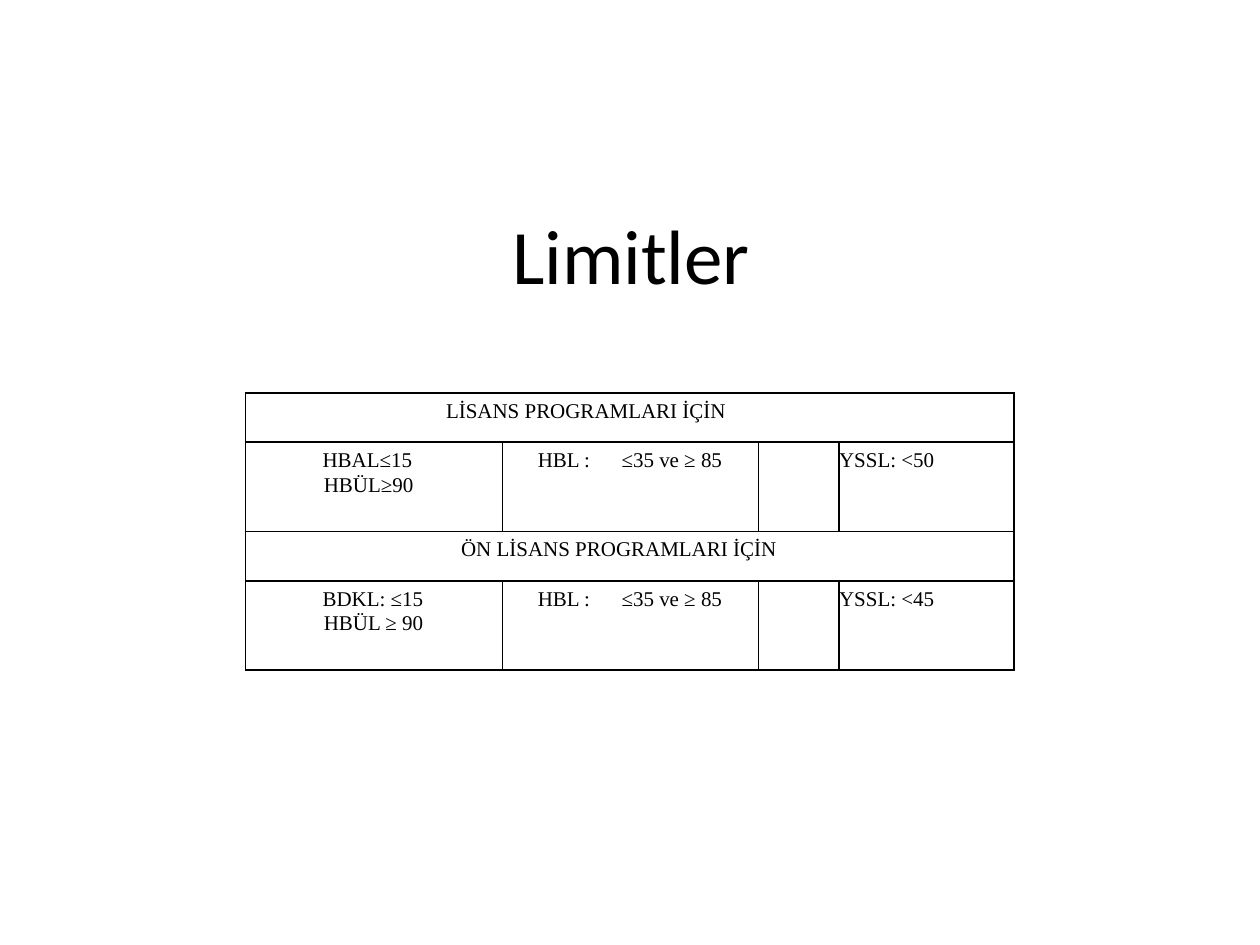
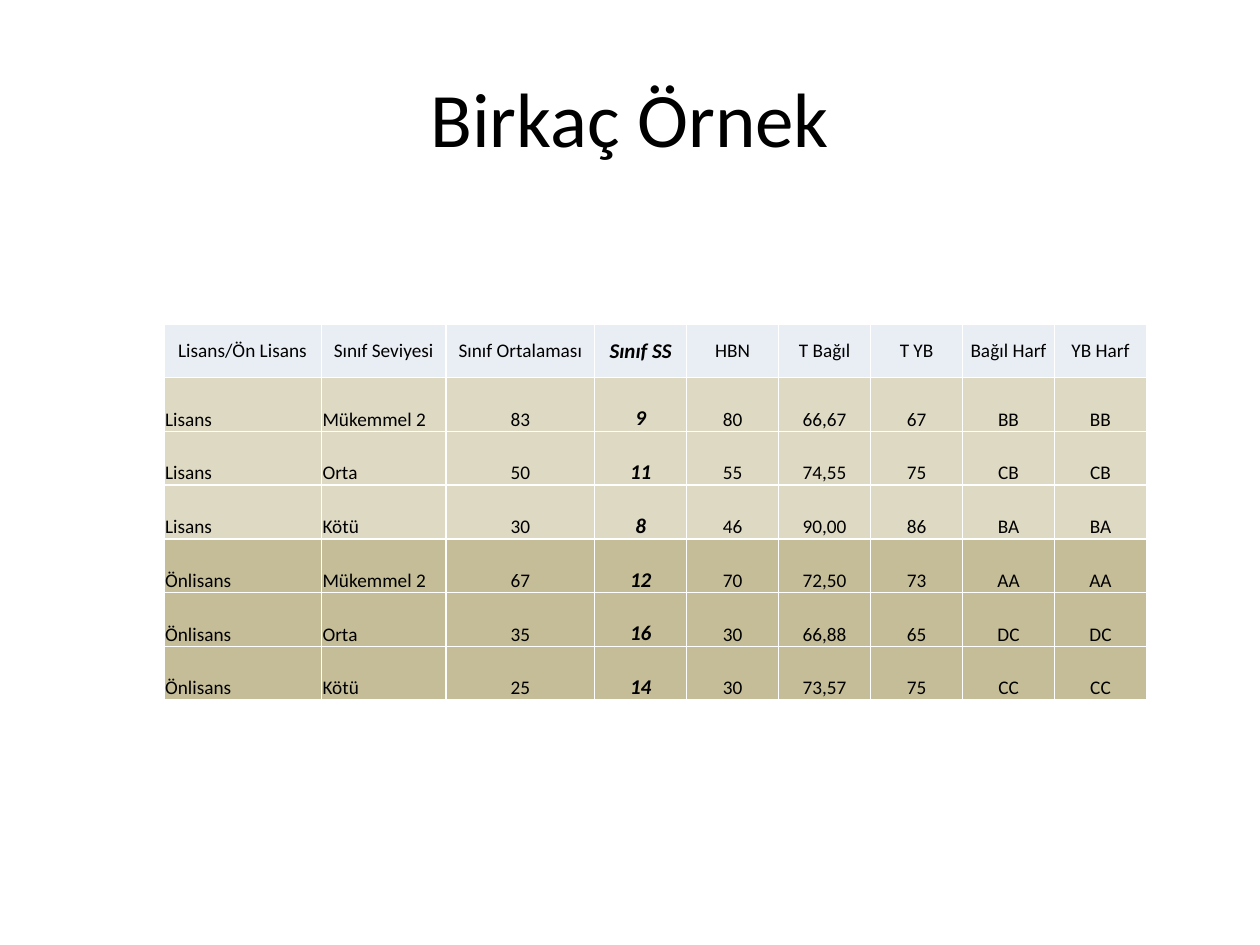
from dataclasses import dataclass
from typing import Optional

from lxml.etree import SubElement
from pptx import Presentation
from pptx.dml.color import RGBColor
from pptx.enum.text import MSO_ANCHOR, PP_ALIGN
from pptx.oxml.ns import qn
from pptx.slide import Slide
from pptx.table import Table, _Cell
from pptx.util import Inches, Pt

BLACK = RGBColor(0x00, 0x00, 0x00)
WHITE = RGBColor(0xFF, 0xFF, 0xFF)
HEADER_BLUE = RGBColor(0xE9, 0xED, 0xF4)
LIGHT_SAND = RGBColor(0xDD, 0xD9, 0xC3)
DARK_SAND = RGBColor(0xC4, 0xBD, 0x97)

SANS = "Calibri"
SERIF = "Times New Roman"
PLAIN_TABLE_STYLE = "{2D5ABB26-0587-4C30-8999-92F81FD0307C}"
WIDE_GAP = "\t"
WIDE_GAP_SPACING = 1500  # hundredths of a point added to a single space

LIMIT_COLUMNS = [1.59, 0.45, 2.03, 0.64, 1.39]
LIMIT_ROWS = [0.39, 0.71] * 2
EXAMPLE_COLUMNS = [1.25, 0.99, 1.18] + [0.73] * 6
EXAMPLE_HEIGHT = 2.99
DEVIATION_COLUMN = 3

EXAMPLES = [
    ["Lisans/Ön Lisans", "Sınıf Seviyesi", "Sınıf Ortalaması", "Sınıf SS", "HBN",
     "T Bağıl", "T YB", "Bağıl Harf", "YB Harf"],
    ["Lisans", "Mükemmel 2", "83", "9", "80", "66,67", "67", "BB", "BB"],
    ["Lisans", "Orta", "50", "11", "55", "74,55", "75", "CB", "CB"],
    ["Lisans", "Kötü", "30", "8", "46", "90,00", "86", "BA", "BA"],
    ["Önlisans", "Mükemmel 2", "67", "12", "70", "72,50", "73", "AA", "AA"],
    ["Önlisans", "Orta", "35", "16", "30", "66,88", "65", "DC", "DC"],
    ["Önlisans", "Kötü", "25", "14", "30", "73,57", "75", "CC", "CC"],
]


@dataclass(frozen=True)
class Programme:
    heading: str
    heading_indent: float
    absolute_limits: str
    relative_limits: tuple[str, str]
    exam_limit: str


@dataclass(frozen=True)
class TextStyle:
    font: str
    size: float
    emphasis: bool = False
    align: PP_ALIGN = PP_ALIGN.LEFT
    indent: Optional[float] = None
    line_spacing: Optional[float] = None


PROGRAMMES = [
    Programme("LİSANS PROGRAMLARI İÇİN", 0.01, "HBAL≤15 HBÜL≥90",
              ("HBL :", "≤35 ve ≥ 85"), "YSSL: <50"),
    Programme("ÖN LİSANS PROGRAMLARI İÇİN", 0.13, "BDKL: ≤15 HBÜL ≥ 90",
              ("HBL :", "≤35 ve ≥ 85"), "YSSL: <45"),
]


def add_titled_slide(presentation: Presentation, title: str, left: float, top: float) -> Slide:
    slide = presentation.slides.add_slide(presentation.slide_layouts[5])
    shape = slide.shapes.title
    shape.left, shape.top = Inches(left), Inches(top)
    shape.width, shape.height = Inches(9), Inches(1.25)
    shape.text_frame.vertical_anchor = MSO_ANCHOR.MIDDLE
    write_text(shape.text_frame.paragraphs[0], [title],
               TextStyle(SANS, 44, align=PP_ALIGN.CENTER))
    return slide


def write_text(paragraph, parts: list[str], style: TextStyle) -> None:
    paragraph.alignment = style.align
    if style.line_spacing:
        paragraph.line_spacing = style.line_spacing
    if style.indent is not None:
        properties = paragraph._p.get_or_add_pPr()
        properties.set("marL", str(Inches(style.indent)))
        properties.set("indent", str(Inches(-0.01)))
    for part in parts:
        run = paragraph.add_run()
        run.text = " " if part == WIDE_GAP else part
        run.font.name, run.font.size = style.font, Pt(style.size)
        run.font.bold = run.font.italic = style.emphasis
        run.font.color.rgb = BLACK
        if part == WIDE_GAP:
            run._r.get_or_add_rPr().set("spc", str(WIDE_GAP_SPACING))


def add_plain_table(slide: Slide, left: float, top: float,
                    columns: list[float], rows: list[float]) -> Table:
    frame = slide.shapes.add_table(len(rows), len(columns), Inches(left), Inches(top),
                                   Inches(sum(columns)), Inches(sum(rows)))
    table = frame.table
    table.first_row = table.horz_banding = False
    table._tbl.tblPr.find(qn("a:tableStyleId")).text = PLAIN_TABLE_STYLE
    for column, width in zip(table.columns, columns):
        column.width = Inches(width)
    for row, height in zip(table.rows, rows):
        row.height = Inches(height)
    return table


def format_cell(cell: _Cell, margins: tuple[float, float, float, float], sides: str,
                border: RGBColor, fill: Optional[RGBColor] = None) -> None:
    """Set margins (left, top, right, bottom), the borders on the named sides and the fill."""
    cell.margin_left, cell.margin_top, cell.margin_right, cell.margin_bottom = map(Inches, margins)
    properties = cell._tc.get_or_add_tcPr()
    for side in "LRTB":
        if side in sides:
            line = SubElement(properties, qn(f"a:ln{side}"), w=str(Pt(1)))
            SubElement(SubElement(line, qn("a:solidFill")), qn("a:srgbClr"), val=str(border))
    if fill is None:
        cell.fill.background()
    else:
        cell.fill.solid()
        cell.fill.fore_color.rgb = fill


def limit_cell_sides(row: int, column: int) -> str:
    """Outer frame and row lines everywhere; the middle column is framed in limit rows."""
    is_limit_row = row % 2 == 1
    left = column == 0 or (is_limit_row and column in (2, 3))
    right = column == 4 or (is_limit_row and column in (1, 2))
    return "TB" + "L" * left + "R" * right


def build_limits(presentation: Presentation) -> None:
    slide = add_titled_slide(presentation, "Limitler", 0.51, 1.39)
    table = add_plain_table(slide, 1.95, 3.12, LIMIT_COLUMNS, LIMIT_ROWS)
    for row in range(len(LIMIT_ROWS)):
        for column in range(len(LIMIT_COLUMNS)):
            format_cell(table.cell(row, column), (0, 0.04, 0.08, 0),
                        limit_cell_sides(row, column), BLACK)
    for index, programme in enumerate(PROGRAMMES):
        heading_row, limit_row = 2 * index, 2 * index + 1
        table.cell(heading_row, 1).merge(table.cell(heading_row, 3))
        label, limits = programme.relative_limits
        entries = [
            (heading_row, 1, [programme.heading], programme.heading_indent, PP_ALIGN.LEFT),
            (limit_row, 0, [programme.absolute_limits], 0.62, PP_ALIGN.LEFT),
            (limit_row, 2, [label, WIDE_GAP, limits], 0.08, PP_ALIGN.CENTER),
            (limit_row, 4, [programme.exam_limit], 0.01, PP_ALIGN.LEFT),
        ]
        for row, column, parts, indent, align in entries:
            write_text(table.cell(row, column).text_frame.paragraphs[0], parts,
                       TextStyle(SERIF, 12, align=align, indent=indent, line_spacing=1.07))


def build_examples(presentation: Presentation) -> None:
    slide = add_titled_slide(presentation, "Birkaç Örnek", 0.5, 0.3)
    row_heights = [EXAMPLE_HEIGHT / len(EXAMPLES)] * len(EXAMPLES)
    table = add_plain_table(slide, 1.3, 2.57, EXAMPLE_COLUMNS, row_heights)
    fills = [HEADER_BLUE] + [LIGHT_SAND] * 3 + [DARK_SAND] * 3
    for row, (values, fill) in enumerate(zip(EXAMPLES, fills)):
        is_header = row == 0
        for column, value in enumerate(values):
            cell = table.cell(row, column)
            format_cell(cell, (0.01, 0.01, 0.01, 0), "LRTB", WHITE, fill)
            cell.vertical_anchor = MSO_ANCHOR.MIDDLE if is_header else MSO_ANCHOR.BOTTOM
            is_deviation = column == DEVIATION_COLUMN
            align = PP_ALIGN.CENTER if is_header or column > 1 else PP_ALIGN.LEFT
            write_text(cell.text_frame.paragraphs[0], [value],
                       TextStyle(SANS, 12 if is_deviation else 11, is_deviation, align))


def main() -> None:
    presentation = Presentation()
    presentation.slide_width, presentation.slide_height = Inches(10), Inches(7.5)
    build_limits(presentation)
    build_examples(presentation)
    presentation.save("out.pptx")


if __name__ == "__main__":
    main()
